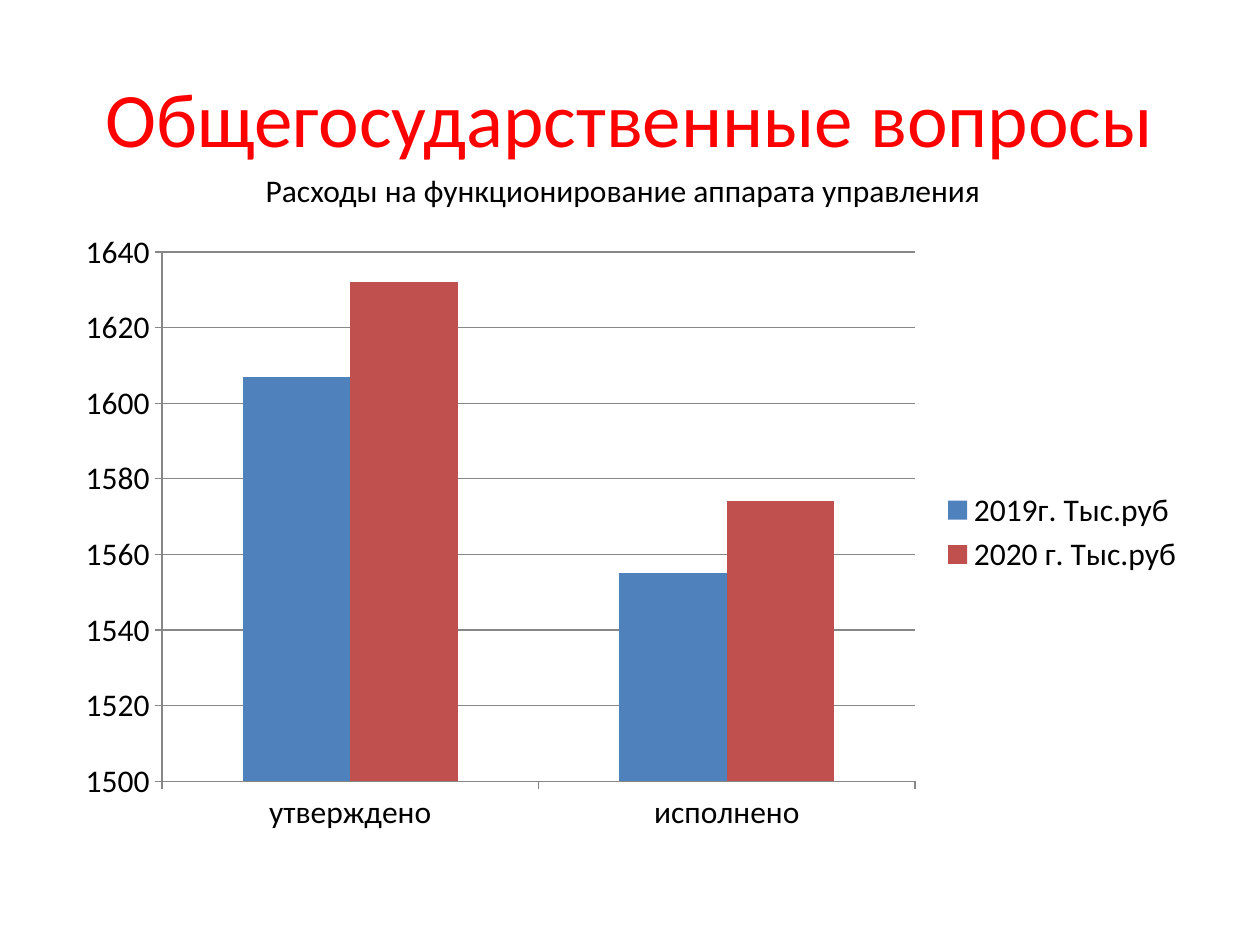
from pptx import Presentation
from pptx.chart.data import CategoryChartData
from pptx.dml.color import RGBColor
from pptx.enum.chart import XL_CHART_TYPE, XL_LEGEND_POSITION, XL_TICK_MARK
from pptx.enum.text import MSO_ANCHOR, MSO_AUTO_SIZE, PP_ALIGN
from pptx.util import Pt

COLUMNS = XL_CHART_TYPE.COLUMN_CLUSTERED
RIGHT = XL_LEGEND_POSITION.RIGHT
OUTSIDE = XL_TICK_MARK.OUTSIDE
CENTER = PP_ALIGN.CENTER
MIDDLE = MSO_ANCHOR.MIDDLE
GROW = MSO_AUTO_SIZE.SHAPE_TO_FIT_TEXT


def rgb(value):
    return RGBColor.from_string(value)


def set_font(font, size, color):
    font.name = "Calibri"
    font.size = Pt(size)
    font.bold = False
    font.color.rgb = rgb(color)


prs = Presentation()
prs.slide_width, prs.slide_height = Pt(720), Pt(540)
s = prs.slides.add_slide(prs.slide_layouts[5])

# Title
title = s.shapes.title
title.left, title.top, title.width, title.height = Pt(36), Pt(21.6), Pt(648), Pt(90)
tf = title.text_frame
tf.vertical_anchor = MIDDLE
p = tf.paragraphs[0]
p.text = "Общегосударственные вопросы"
p.alignment = CENTER
set_font(p.font, 44, "FF0000")

# Column chart
data = CategoryChartData()
data.categories = ["утверждено", "исполнено"]
data.add_series("2019г. Тыс.руб", [1607, 1555])
data.add_series("2020 г. Тыс.руб", [1632, 1574])
chart = s.shapes.add_chart(COLUMNS, Pt(36), Pt(126), Pt(648), Pt(356.4), data).chart
set_font(chart.font, 18, "000000")
chart.has_title = False
chart.has_legend = True
chart.legend.position = RIGHT
chart.legend.include_in_layout = False

plot = chart.plots[0]
plot.gap_width = 150
plot.overlap = 0
plot.vary_by_categories = False
for series, color in zip(plot.series, ["4F81BD", "C0504D"]):
    series.format.fill.solid()
    series.format.fill.fore_color.rgb = rgb(color)

# Axes and gridlines
value_axis = chart.value_axis
value_axis.minimum_scale, value_axis.maximum_scale = 1500, 1640
value_axis.major_unit = 20
value_axis.has_major_gridlines = True
for axis in (chart.category_axis, value_axis):
    axis.major_tick_mark = OUTSIDE
for part in (chart.category_axis, value_axis, value_axis.major_gridlines):
    part.format.line.color.rgb = rgb("878787")
    part.format.line.width = Pt(0.75)

# Chart heading
heading = s.shapes.add_textbox(Pt(144.7), Pt(94.3), Pt(435.6), Pt(28.8))
tf = heading.text_frame
tf.word_wrap = False
tf.auto_size = GROW
p = tf.paragraphs[0]
p.text = "Расходы на функционирование аппарата управления"
set_font(p.font, 18, "000000")

prs.save("out.pptx")
